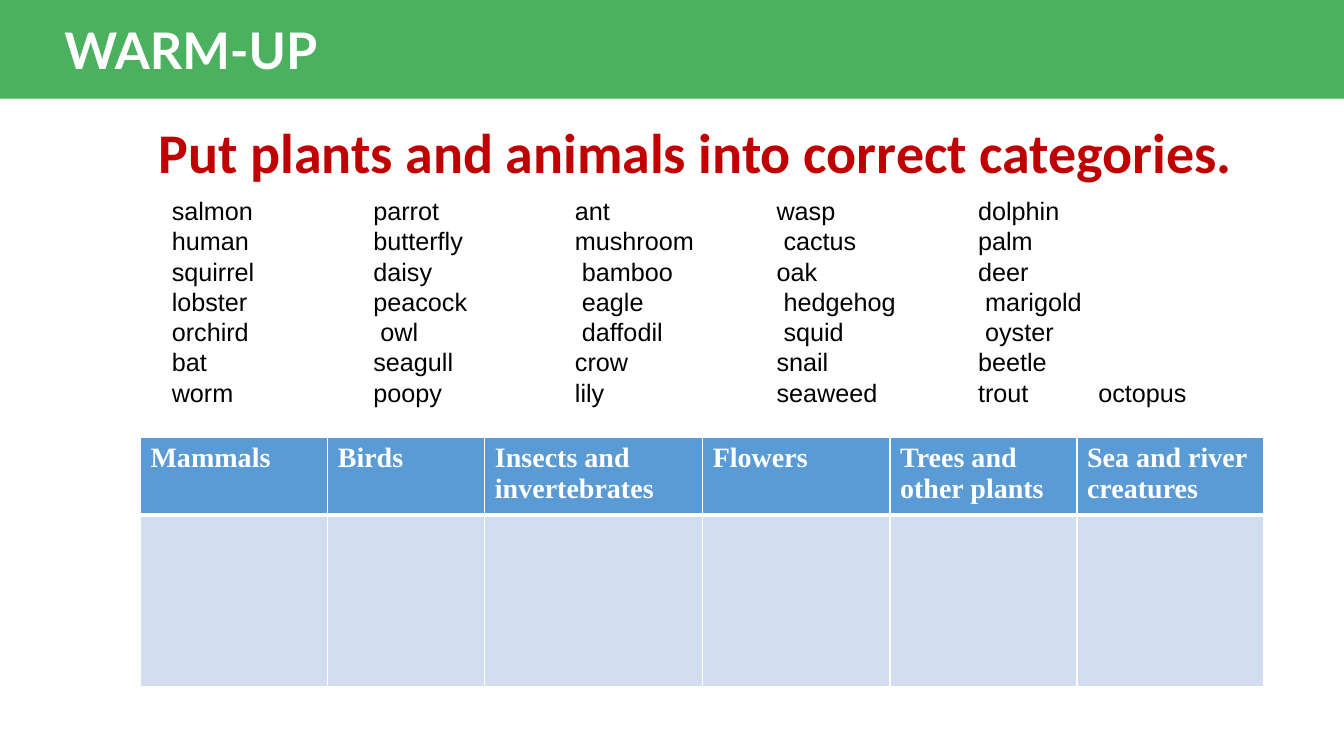
from lxml import etree
from pptx import Presentation
from pptx import util as u
from pptx.dml.color import RGBColor
from pptx.enum import shapes, text
from pptx.oxml import ns

GREEN = RGBColor(0x4C, 0xB1, 0x5F)
RED = RGBColor(0xC0, 0x00, 0x00)
BLUE = RGBColor(0x5B, 0x9B, 0xD5)
PALE_BLUE = RGBColor(0xD2, 0xDE, 0xEF)
WHITE = RGBColor(0xFF, 0xFF, 0xFF)
BLACK = RGBColor(0x00, 0x00, 0x00)

WORD_ROWS = [
    ["salmon", "parrot", "ant", "wasp", "dolphin"],
    ["human", "butterfly", "mushroom", " cactus", "palm"],
    ["squirrel", "daisy", " bamboo", "oak", "deer"],
    ["lobster", "peacock", " eagle", " hedgehog", " marigold"],
    ["orchird", " owl", " daffodil", " squid", " oyster"],
    ["bat", "seagull", "crow", "snail", "beetle"],
    ["worm", "poopy", "lily", "seaweed", "trout", "octopus"],
]
TAB_STOPS = [5.08 * step for step in range(1, 5)] + [23.35]
CATEGORIES = [
    ("Mammals", 4.72),
    ("Birds", 3.96),
    ("Insects and invertebrates", 5.49),
    ("Flowers", 4.72),
    ("Trees and other plants", 4.71),
    ("Sea and river creatures", 4.71),
]
ROW_HEIGHTS = [1.95, 4.32]


def style_paragraph(para, name, size, color, bold=False):
    para.alignment = text.PP_ALIGN.LEFT
    para.font.name = name
    para.font.size = u.Pt(size)
    para.font.bold = bold
    para.font.color.rgb = color


def prepare_frame(shape):
    frame = shape.text_frame
    frame.word_wrap = True
    frame.auto_size = text.MSO_AUTO_SIZE.NONE
    frame.vertical_anchor = text.MSO_ANCHOR.TOP
    return frame


def add_header(page, left, top, width, height):
    band = page.shapes.add_shape(
        shapes.MSO_SHAPE.RECTANGLE, u.Cm(left), u.Cm(top), u.Cm(width), u.Cm(height))
    band.shadow.inherit = False
    band.fill.solid()
    band.fill.fore_color.rgb = GREEN
    band.line.fill.background()

    title = page.shapes.title
    title._element.addprevious(band._element)
    title.left, title.top = u.Cm(left + 1.37), u.Cm(top + 0.36)
    title.width, title.height = u.Cm(12.7), u.Cm(height - 0.69)
    frame = prepare_frame(title)
    frame.text = "WARM-UP"
    style_paragraph(frame.paragraphs[0], "Lato", 36, WHITE, True)


def add_instruction(page, left, top, width, height):
    box = page.shapes.add_textbox(u.Cm(left), u.Cm(top), u.Cm(width), u.Cm(height))
    frame = prepare_frame(box)
    frame.text = "Put plants and animals into correct categories."
    style_paragraph(frame.paragraphs[0], "Calibri", 40, RED, True)


def set_tab_stops(para):
    properties = para._p.get_or_add_pPr()
    stops = etree.SubElement(properties, ns.qn("a:tabLst"))
    for position in TAB_STOPS:
        etree.SubElement(stops, ns.qn("a:tab"), pos=str(u.Cm(position)), algn="l")


def add_word_bank(page, left, top, width, height):
    box = page.shapes.add_textbox(u.Cm(left), u.Cm(top), u.Cm(width), u.Cm(height))
    frame = prepare_frame(box)
    frame.text = "\n".join("\t".join(words) for words in WORD_ROWS)
    for para in frame.paragraphs:
        para.line_spacing = u.Pt(21.6)
        set_tab_stops(para)
        style_paragraph(para, "Arial", 18, BLACK)


def set_border(cell, side, points):
    properties = cell._tc.get_or_add_tcPr()
    line = etree.SubElement(properties, ns.qn("a:ln" + side), w=str(u.Pt(points)))
    fill = etree.SubElement(line, ns.qn("a:solidFill"))
    etree.SubElement(fill, ns.qn("a:srgbClr"), val=str(WHITE))


def add_category_table(page, left, top):
    width = sum(size for _, size in CATEGORIES)
    table = page.shapes.add_table(
        len(ROW_HEIGHTS), len(CATEGORIES), u.Cm(left), u.Cm(top),
        u.Cm(width), u.Cm(sum(ROW_HEIGHTS))).table
    for row, height in zip(table.rows, ROW_HEIGHTS):
        row.height = u.Cm(height)
    for index, (name, size) in enumerate(CATEGORIES):
        table.columns[index].width = u.Cm(size)
        header, answer = table.cell(0, index), table.cell(1, index)
        for cell, color, thick_side in ((header, BLUE, "B"), (answer, PALE_BLUE, "T")):
            for side in "LRTB":
                set_border(cell, side, 3 if side == thick_side else 1)
            cell.fill.solid()
            cell.fill.fore_color.rgb = color
        header.text = name
        style_paragraph(header.text_frame.paragraphs[0], "Times New Roman", 20, WHITE, True)


def main():
    deck = Presentation()
    deck.slide_width, deck.slide_height = u.Cm(33.87), u.Cm(19.05)
    page = deck.slides.add_slide(deck.slide_layouts[5])
    add_header(page, 0, 0, 33.87, 2.49)
    add_instruction(page, 3.75, 2.84, 28.12, 1.96)
    add_word_bank(page, 4.08, 4.8, 27.38, 5.64)
    add_category_table(page, 3.54, 11.02)
    deck.save("out.pptx")


if __name__ == "__main__":
    main()
